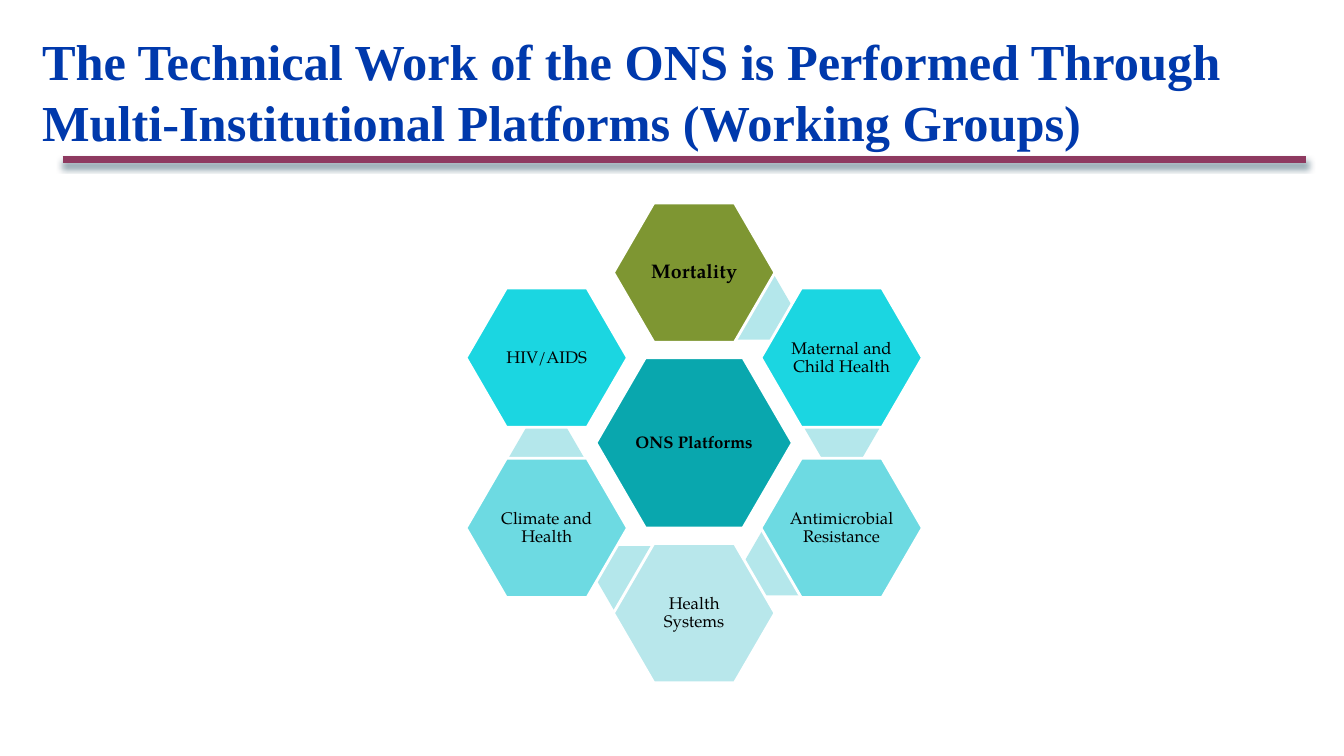
from dataclasses import dataclass
from math import cos, radians, sin

from lxml import etree
from pptx import Presentation
from pptx.dml.color import RGBColor
from pptx.enum.shapes import MSO_CONNECTOR, MSO_SHAPE
from pptx.enum.text import MSO_ANCHOR, MSO_AUTO_SIZE, PP_ALIGN
from pptx.oxml.ns import qn
from pptx.util import Cm, Pt

HEXAGON = MSO_SHAPE.HEXAGON
STRAIGHT = MSO_CONNECTOR.STRAIGHT
MIDDLE = MSO_ANCHOR.MIDDLE
NO_AUTOFIT = MSO_AUTO_SIZE.NONE
LEFT, CENTER = PP_ALIGN.LEFT, PP_ALIGN.CENTER
TITLE_ONLY = 5


@dataclass(frozen=True)
class Theme:
    title_font: str = "Times New Roman"
    label_font: str = "TeX Gyre Pagella"
    title_size: float = 36
    label_size: float = 12
    highlight_size: float = 14
    title_color: str = "0039AC"
    label_color: str = "000000"
    rule: str = "8E3A60"
    rule_shadow: str = "003148"
    outline: str = "FFFFFF"
    hub: str = "09A7AE"
    link: str = "B4E7EB"
    highlight: str = "7E9632"
    bright: str = "1BD6E1"
    medium: str = "6DDAE2"
    pale: str = "B8E7EB"


class PlatformSlide:
    def __init__(self, presentation, theme):
        self.theme = theme
        self.slide = presentation.slides.add_slide(presentation.slide_layouts[TITLE_ONLY])

    def style_text(self, paragraph, font, size, color, bold):
        for run in paragraph.runs:
            run.font.name = font
            run.font.size = Pt(size)
            run.font.bold = bold
            run.font.color.rgb = RGBColor.from_string(color)

    def title(self, text):
        title = self.slide.shapes.title
        title.left, title.top = Cm(1.06), Cm(0.64)
        title.width, title.height = Cm(32.18), Cm(3.18)
        frame = title.text_frame
        frame.text = text
        frame.word_wrap = True
        frame.auto_size = NO_AUTOFIT
        frame.vertical_anchor = MIDDLE
        frame.margin_left = frame.margin_right = frame.margin_bottom = 0
        frame.margin_top = Cm(0.13)
        heading = frame.paragraphs[0]
        heading.alignment = LEFT
        self.style_text(heading, self.theme.title_font, self.theme.title_size,
                        self.theme.title_color, True)

    def rule(self, left, right, y):
        """Draw the thick line under the title with its soft shadow."""
        rule = self.slide.shapes.add_connector(STRAIGHT, Cm(left), Cm(y), Cm(right), Cm(y))
        rule.line.color.rgb = RGBColor.from_string(self.theme.rule)
        rule.line.width = Pt(4.5)
        effects = etree.SubElement(rule._element.spPr, qn("a:effectLst"))
        shadow = etree.SubElement(effects, qn("a:outerShdw"), blurRad=str(Pt(4.5)),
                                  dist=str(Pt(3)), dir="5400000", rotWithShape="0")
        color = etree.SubElement(shadow, qn("a:srgbClr"), val=self.theme.rule_shadow)
        etree.SubElement(color, qn("a:alpha"), val="48000")

    def hexagon(self, center, size, fill):
        (x, y), (width, height) = center, size
        hexagon = self.slide.shapes.add_shape(
            HEXAGON, Cm(x - width / 2), Cm(y - height / 2), Cm(width), Cm(height))
        hexagon.adjustments[0] = 0.29
        hexagon.shadow.inherit = False
        hexagon.fill.solid()
        hexagon.fill.fore_color.rgb = RGBColor.from_string(fill)
        hexagon.line.fill.background()
        return hexagon

    def platform(self, center, size, fill, text, text_size, bold=False):
        """Draw an outlined hexagon with its label."""
        platform = self.hexagon(center, size, fill)
        platform.line.color.rgb = RGBColor.from_string(self.theme.outline)
        platform.line.width = Pt(2)
        frame = platform.text_frame
        frame.text = text
        frame.word_wrap = True
        frame.vertical_anchor = MIDDLE
        frame.margin_left = frame.margin_right = 0
        frame.margin_top = frame.margin_bottom = Cm(0.05)
        label = frame.paragraphs[0]
        label.alignment = CENTER
        label.line_spacing = 0.9
        self.style_text(label, self.theme.label_font, text_size, self.theme.label_color, bold)


def around(center, radius, angle):
    """Return the point at a clockwise angle in degrees from straight up."""
    x, y = center
    return x + radius * sin(radians(angle)), y - radius * cos(radians(angle))


def main():
    presentation = Presentation()
    presentation.slide_width, presentation.slide_height = Cm(33.86), Cm(19.05)
    theme = Theme()
    page = PlatformSlide(presentation, theme)
    page.title("The Technical Work of the ONS is Performed Through "
               "Multi-Institutional Platforms (Working Groups)")
    page.rule(1.58, 32.91, 4.02)

    hub_center = (17.49, 11.16)
    page.platform(hub_center, (4.95, 4.29), theme.hub, "ONS Platforms", theme.label_size, True)

    working_groups = [
        ("Mortality", theme.highlight),
        ("Maternal and Child Health", theme.bright),
        ("Antimicrobial Resistance", theme.medium),
        ("Health Systems", theme.pale),
        ("Climate and Health", theme.medium),
        ("HIV/AIDS", theme.bright),
    ]
    step = 360 / len(working_groups)
    for index, (group, fill) in enumerate(working_groups):
        angle = index * step
        if index < len(working_groups) - 1:
            page.hexagon(around(hub_center, 3.74, angle + 24.5), (1.88, 1.6), theme.link)
        highlighted = index == 0
        size = theme.highlight_size if highlighted else theme.label_size
        page.platform(around(hub_center, 4.29, angle), (4.07, 3.51), fill, group, size,
                      highlighted)

    presentation.save("out.pptx")


if __name__ == "__main__":
    main()
